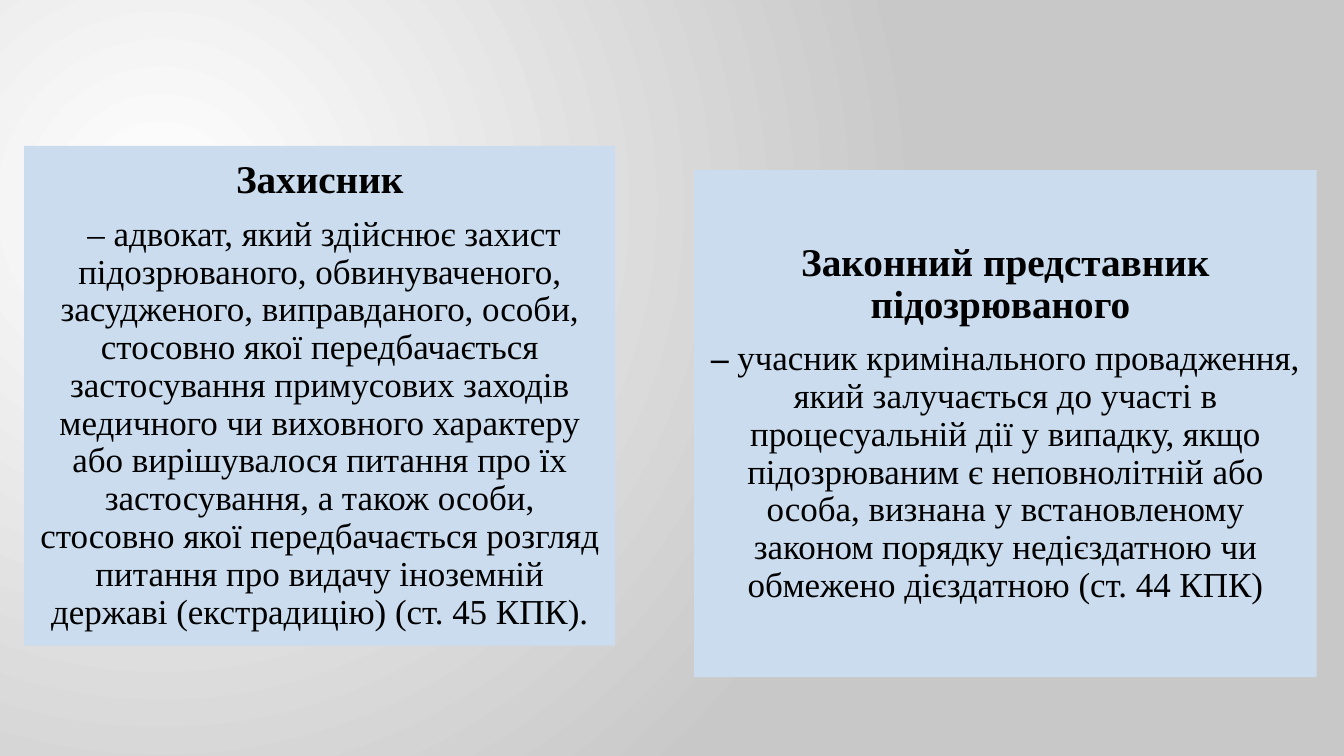
from dataclasses import dataclass

from lxml.etree import SubElement
from pptx import Presentation
from pptx.dml.color import RGBColor
from pptx.enum.shapes import MSO_SHAPE
from pptx.enum.text import MSO_ANCHOR, PP_ALIGN
from pptx.oxml.ns import qn
from pptx.slide import Slide
from pptx.util import Emu, Pt

PX = 9525
FONT = "Times New Roman"
HEADING_SIZE = 28
BODY_SIZE = 25
INSET = 12


@dataclass(frozen=True)
class Definition:
    left: int
    top: int
    width: int
    height: int
    term: str
    lead: str
    meaning: str


DEFINITIONS = [
    Definition(
        23, 139, 563, 476,
        "Захисник",
        "",
        " – адвокат, який здійснює захист підозрюваного, обвинуваченого, "
        "засудженого, виправданого, особи, стосовно якої передбачається "
        "застосування примусових заходів медичного чи виховного характеру "
        "або вирішувалося питання про їх застосування, а також особи, "
        "стосовно якої передбачається розгляд питання про видачу іноземній "
        "державі (екстрадицію) (ст. 45 КПК).",
    ),
    Definition(
        661, 162, 593, 483,
        "Законний представник підозрюваного ",
        "– ",
        "учасник кримінального провадження, який залучається до участі в "
        "процесуальній дії у випадку, якщо підозрюваним є неповнолітній або "
        "особа, визнана у встановленому законом порядку недієздатною чи "
        "обмежено дієздатною (ст. 44 КПК)",
    ),
]


def px(n: int) -> Emu:
    return Emu(n * PX)


def color(value: str) -> RGBColor:
    return RGBColor.from_string(value)


def paint_background(s: Slide) -> None:
    fill = s.background.fill
    fill.gradient()
    for stop, value in zip(fill.gradient_stops, ("FFFFFF", "C8C8C8")):
        stop.color.rgb = color(value)
    grad = s.element.find(".//" + qn("a:gradFill"))
    grad.remove(grad.find(qn("a:lin")))
    circle = SubElement(grad, qn("a:path"), path="circle")
    SubElement(circle, qn("a:fillToRect"), l="50000", t="55000", r="125000", b="100000")


def add_definition(s: Slide, d: Definition) -> None:
    sp = s.shapes.add_shape(
        MSO_SHAPE.RECTANGLE, px(d.left), px(d.top), px(d.width), px(d.height)
    )
    sp.shadow.inherit = False
    sp.fill.solid()
    sp.fill.fore_color.rgb = color("CADCEE")
    sp.line.fill.background()

    tf = sp.text_frame
    tf.word_wrap = True
    tf.vertical_anchor = MSO_ANCHOR.MIDDLE
    tf.margin_left = tf.margin_right = tf.margin_top = tf.margin_bottom = px(INSET)

    paragraphs = [
        (tf.paragraphs[0], HEADING_SIZE, [(d.term, True)]),
        (tf.add_paragraph(), BODY_SIZE, [(d.lead, True), (d.meaning, False)]),
    ]
    for p, size, runs in paragraphs:
        p.alignment = PP_ALIGN.CENTER
        p.line_spacing = 0.9
        p.space_after = Pt(size * 0.35)
        for text, bold in runs:
            if not text:
                continue
            r = p.add_run()
            r.text = text
            r.font.name = FONT
            r.font.size = Pt(size)
            r.font.bold = bold
            r.font.color.rgb = color("000000")


def main() -> None:
    prs = Presentation()
    prs.slide_width, prs.slide_height = px(1280), px(720)
    s = prs.slides.add_slide(prs.slide_layouts[6])
    paint_background(s)
    for d in DEFINITIONS:
        add_definition(s, d)
    prs.save("out.pptx")


if __name__ == "__main__":
    main()
